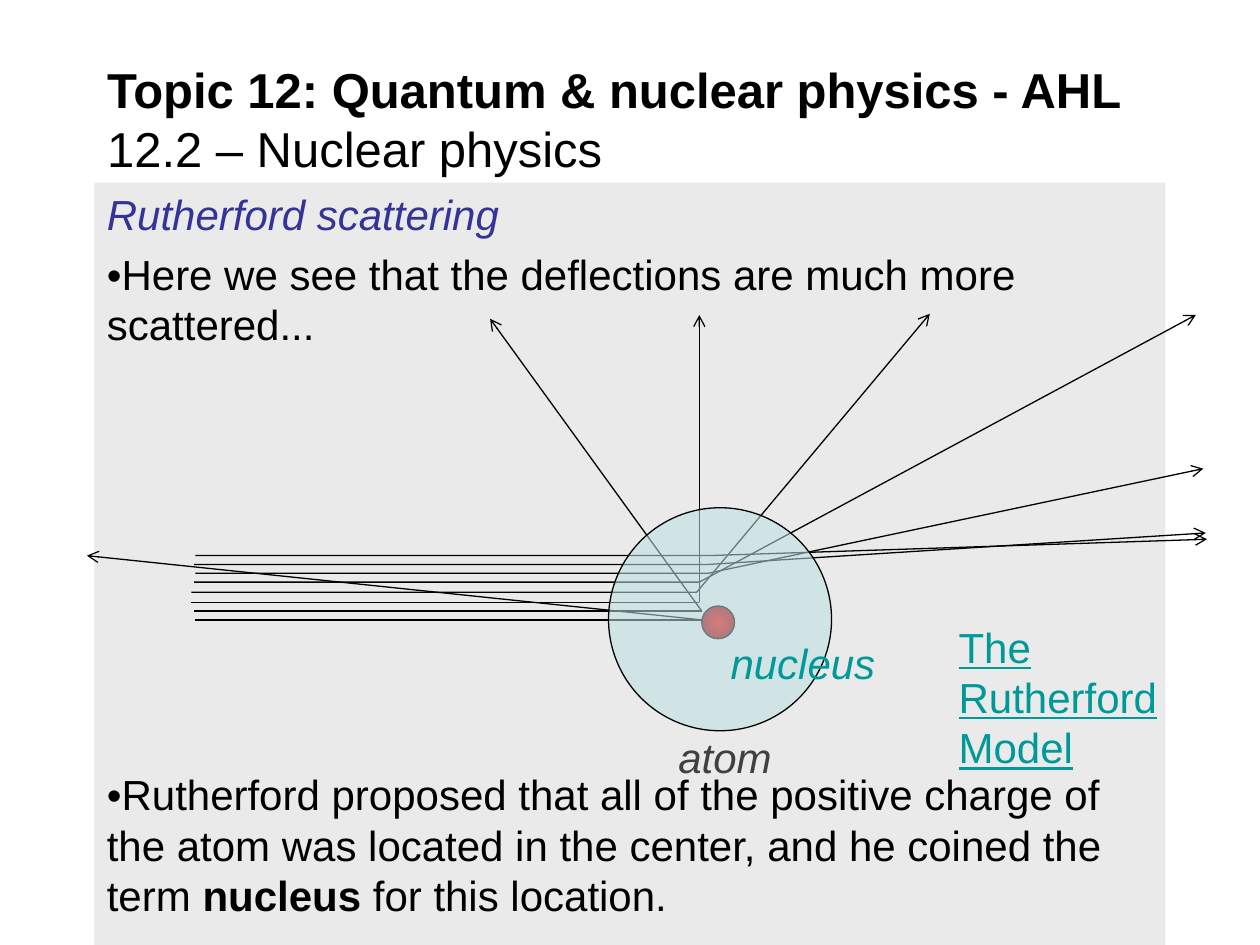
from lxml import etree
from pptx import Presentation
from pptx import util as u
from pptx.dml import color
from pptx.enum import shapes, text
from pptx.oxml import ns

COLORS = {
    "panel": "EAEAEA", "heading": "333399", "ink": "000000", "atom": "BBE0E3",
    "label": "404040", "accent": "009999", "core": "FF0000", "rim": "760000",
}
TITLE = [
    [("Topic 12: Quantum & nuclear physics - AHL", {"bold": True}),
     ("\n", {}), ("12.2 – Nuclear physics", {})],
]
NOTES = [
    [("Rutherford scattering", {"color": "heading", "italic": True})],
    [("•Here we see that the deflections are much more scattered...", {})],
    [("•Rutherford proposed that all of the positive charge of the atom was "
      "located in the center, and he coined the term ", {}),
     ("nucleus", {"bold": True}), (" for this location.", {})],
]
NOTE_GAPS = [0, 5, 240]
BENT_RAYS = [
    [(1.55, 4.41), (5.63, 4.41), (9.58, 4.28)],
    [(1.54, 4.48), (5.62, 4.48), (9.57, 4.23)],
    [(1.55, 4.55), (5.62, 4.55), (9.55, 3.72)],
    [(1.54, 4.62), (5.55, 4.62), (9.49, 2.5)],
    [(1.52, 4.7), (5.53, 4.7), (7.38, 2.49)],
]
SHARP_RAYS = [
    [(1.52, 4.78), (5.55, 4.78), (5.55, 2.5)],
    [(1.54, 4.85), (5.57, 4.85), (3.89, 2.53)],
    [(1.55, 4.92), (5.57, 4.92), (0.69, 4.41)],
]


def rgb(name):
    return color.RGBColor.from_string(COLORS[name])


def inches(values):
    return [u.Inches(value) for value in values]


def write(frame, paragraphs, size=24, ink="ink", gaps=None, wrap=True,
          align=text.PP_ALIGN.LEFT, anchor=text.MSO_ANCHOR.TOP, **style):
    frame.word_wrap = wrap
    frame.vertical_anchor = anchor
    frame.auto_size = text.MSO_AUTO_SIZE.NONE
    for index, pieces in enumerate(paragraphs):
        paragraph = frame.add_paragraph() if index else frame.paragraphs[0]
        paragraph.alignment = align
        paragraph.space_before = u.Pt(gaps[index] if gaps else 0)
        for words, own in pieces:
            if words == "\n":
                paragraph.add_line_break()
                continue
            look = {**style, **own}
            run = paragraph.add_run()
            run.text = words
            run.font.name = "Arial"
            run.font.size = u.Pt(size)
            run.font.bold = look.get("bold", False)
            run.font.italic = look.get("italic", False)
            run.font.underline = look.get("underline", False)
            run.font.color.rgb = rgb(look.get("color", ink))


def outline(item, arrow=False):
    item.line.color.rgb = rgb("ink")
    item.line.width = u.Pt(0.75)
    if arrow:
        etree.SubElement(item.line._get_or_add_ln(), ns.qn("a:tailEnd"), type="arrow")


def add_solid(slide, kind, box, fill):
    item = slide.shapes.add_shape(kind, *inches(box))
    item.shadow.inherit = False
    item.fill.solid()
    item.fill.fore_color.rgb = rgb(fill)
    return item


def add_bent_ray(slide, points):
    start, *rest = [tuple(inches(point)) for point in points]
    builder = slide.shapes.build_freeform(*start)
    builder.add_line_segments(rest, close=False)
    ray = builder.convert_to_shape()
    ray.shadow.inherit = False
    ray.fill.background()
    outline(ray, arrow=True)


def add_straight(slide, start, end, arrow):
    ray = slide.shapes.add_connector(
        shapes.MSO_CONNECTOR.STRAIGHT, *inches(start + end))
    outline(ray, arrow)
    etree.SubElement(ray._element.spPr, ns.qn("a:effectLst"))


def add_label(slide, words, box, **style):
    label = slide.shapes.add_textbox(*inches(box))
    write(label.text_frame, [[(words, {})]], **style)


def add_nucleus(slide):
    nucleus = add_solid(slide, shapes.MSO_SHAPE.OVAL, (5.57, 4.81, 0.26, 0.26), "core")
    nucleus.fill.gradient()
    for stop, name in zip(nucleus.fill.gradient_stops, ("core", "rim")):
        stop.color.rgb = rgb(name)
    gradient = nucleus._element.spPr.find(ns.qn("a:gradFill"))
    gradient.remove(gradient.find(ns.qn("a:lin")))
    radial = etree.SubElement(gradient, ns.qn("a:path"))
    radial.set("path", "circle")
    etree.SubElement(radial, ns.qn("a:fillToRect"),
                     dict.fromkeys("ltrb", "50000"))
    outline(nucleus)


def add_atom(slide):
    atom = add_solid(slide, shapes.MSO_SHAPE.OVAL, (4.83, 4.03, 1.77, 1.77), "atom")
    tint = atom._element.spPr.find(".//" + ns.qn("a:srgbClr"))
    etree.SubElement(tint, ns.qn("a:alpha"), val="55000")
    outline(atom)


def main():
    deck = Presentation()
    deck.slide_width, deck.slide_height = inches((10, 7.5))
    slide = deck.slides.add_slide(deck.slide_layouts[5])

    panel = add_solid(slide, shapes.MSO_SHAPE.RECTANGLE, (0.75, 1.45, 8.5, 6.05), "panel")
    panel.line.fill.background()
    write(panel.text_frame, NOTES, gaps=NOTE_GAPS)

    add_nucleus(slide)
    for points in BENT_RAYS:
        add_bent_ray(slide, points)
    for start, bend, end in SHARP_RAYS:
        add_straight(slide, start, bend, arrow=False)
        add_straight(slide, bend, end, arrow=True)

    add_label(slide, "atom", (4.89, 5.76, 1.73, 0.51), ink="label",
              italic=True, align=text.PP_ALIGN.CENTER)
    add_atom(slide)
    add_label(slide, "The Rutherford Model", (7.51, 4.88, 1.94, 1.31),
              ink="accent", underline=True)
    add_label(slide, "nucleus", (5.7, 5.01, 1.36, 0.51), ink="accent",
              italic=True, wrap=False)

    title = slide.shapes.title
    title.left, title.top, title.width, title.height = inches((0.75, 0.45, 8.5, 0.98))
    write(title.text_frame, TITLE, size=28, anchor=text.MSO_ANCHOR.MIDDLE)

    deck.save("out.pptx")


if __name__ == "__main__":
    main()
